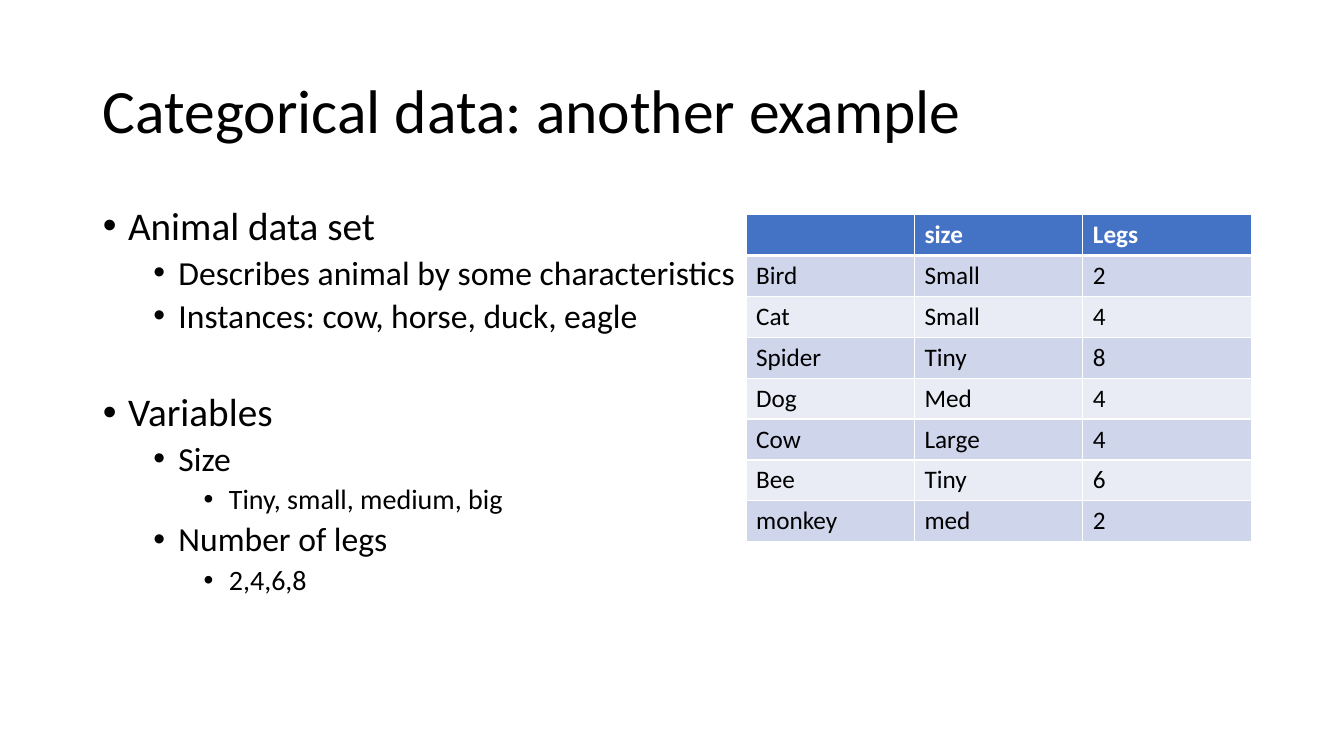
from lxml.etree import SubElement
from pptx import Presentation
from pptx.dml.color import RGBColor
from pptx.enum.text import MSO_ANCHOR, MSO_AUTO_SIZE, PP_ALIGN
from pptx.oxml.ns import qn
from pptx.util import Inches, Pt

BLACK = RGBColor(0x00, 0x00, 0x00)
WHITE = RGBColor(0xFF, 0xFF, 0xFF)
BLUE = RGBColor(0x44, 0x72, 0xC4)
BANDS = [RGBColor(0xCF, 0xD5, 0xEA), RGBColor(0xE9, 0xEB, 0xF5)]

SIZES = [28, 24, 20]
GAPS = [10, 5, 5]
TOPIC_GAP = 41

TITLE = "Categorical data: another example"
TOPICS = [
    [(0, "Animal data set"),
     (1, "Describes animal by some characteristics"),
     (1, "Instances: cow, horse, duck, eagle")],
    [(0, "Variables"),
     (1, "Size"),
     (2, "Tiny, small, medium, big"),
     (1, "Number of legs"),
     (2, "2,4,6,8")],
]
ANIMALS = [
    ("", "size", "Legs"),
    ("Bird", "Small", "2"),
    ("Cat", "Small", "4"),
    ("Spider", "Tiny", "8"),
    ("Dog", "Med", "4"),
    ("Cow", "Large", "4"),
    ("Bee", "Tiny", "6"),
    ("monkey", "med", "2"),
]


def style(font, size, color=BLACK, bold=False):
    font.color.rgb = color
    look = {"name": "Calibri", "size": Pt(size), "bold": bold}
    for name, value in look.items():
        setattr(font, name, value)


def place(shape, box, anchor):
    for name, value in zip(("left", "top", "width", "height"), box):
        setattr(shape, name, Inches(value))
    frame = shape.text_frame
    frame.word_wrap = True
    frame.auto_size = MSO_AUTO_SIZE.NONE
    frame.vertical_anchor = anchor
    return frame


def add_bullet(para, level):
    props = para._p.get_or_add_pPr()
    props.set("marL", str(Inches(0.25 + 0.5 * level)))
    props.set("indent", str(Inches(-0.25)))
    SubElement(props, qn("a:buFont"), typeface="Arial")
    SubElement(props, qn("a:buChar"), char="•")


def fill_title(shape, box):
    para = place(shape, box, MSO_ANCHOR.MIDDLE).paragraphs[0]
    para.text = TITLE
    para.alignment = PP_ALIGN.LEFT
    para.line_spacing = 0.9
    style(para.runs[0].font, 44)


def fill_list(shape, box):
    frame = place(shape, box, MSO_ANCHOR.TOP)
    para = frame.paragraphs[0]
    for part, topic in enumerate(TOPICS):
        for row, (level, text) in enumerate(topic):
            first = part == row == 0
            if not first:
                para = frame.add_paragraph()
            add_bullet(para, level)
            gap = TOPIC_GAP if row == 0 else GAPS[level]
            look = {"text": text, "level": level, "line_spacing": 0.9,
                    "space_before": Pt(0 if first else gap)}
            for name, value in look.items():
                setattr(para, name, value)
            style(para.runs[0].font, SIZES[level])


def add_borders(cell, head):
    """Draw white cell edges, with a thick one under the header."""
    props = cell._tc.get_or_add_tcPr()
    for spot, side in enumerate(("lnL", "lnR", "lnT", "lnB")):
        width = 3 if head and side == "lnB" else 1
        line = props.makeelement(qn("a:" + side), {"w": str(Pt(width))})
        fill = SubElement(line, qn("a:solidFill"))
        SubElement(fill, qn("a:srgbClr"), val=str(WHITE))
        props.insert(spot, line)


def add_grid(slide, box):
    shape = slide.shapes.add_table(
        len(ANIMALS), len(ANIMALS[0]), *map(Inches, box))
    for row, texts in enumerate(ANIMALS):
        head = row == 0
        for col, text in enumerate(texts):
            cell = shape.table.cell(row, col)
            cell.fill.solid()
            cell.fill.fore_color.rgb = BLUE if head else BANDS[(row - 1) % 2]
            add_borders(cell, head)
            para = cell.text_frame.paragraphs[0]
            para.text = text
            style(para.font, 18)
            for run in para.runs:
                style(run.font, 18, WHITE if head else BLACK, head)


def main():
    deck = Presentation()
    deck.slide_width, deck.slide_height = Inches(13.33), Inches(7.5)
    slide = deck.slides.add_slide(deck.slide_layouts[1])
    fill_title(slide.shapes.title, (0.92, 0.4, 11.5, 1.45))
    fill_list(slide.placeholders[1], (0.92, 2, 11.5, 4.76))
    add_grid(slide, (7.4, 2.13, 5.01, 3.24))
    deck.save("out.pptx")


if __name__ == "__main__":
    main()
